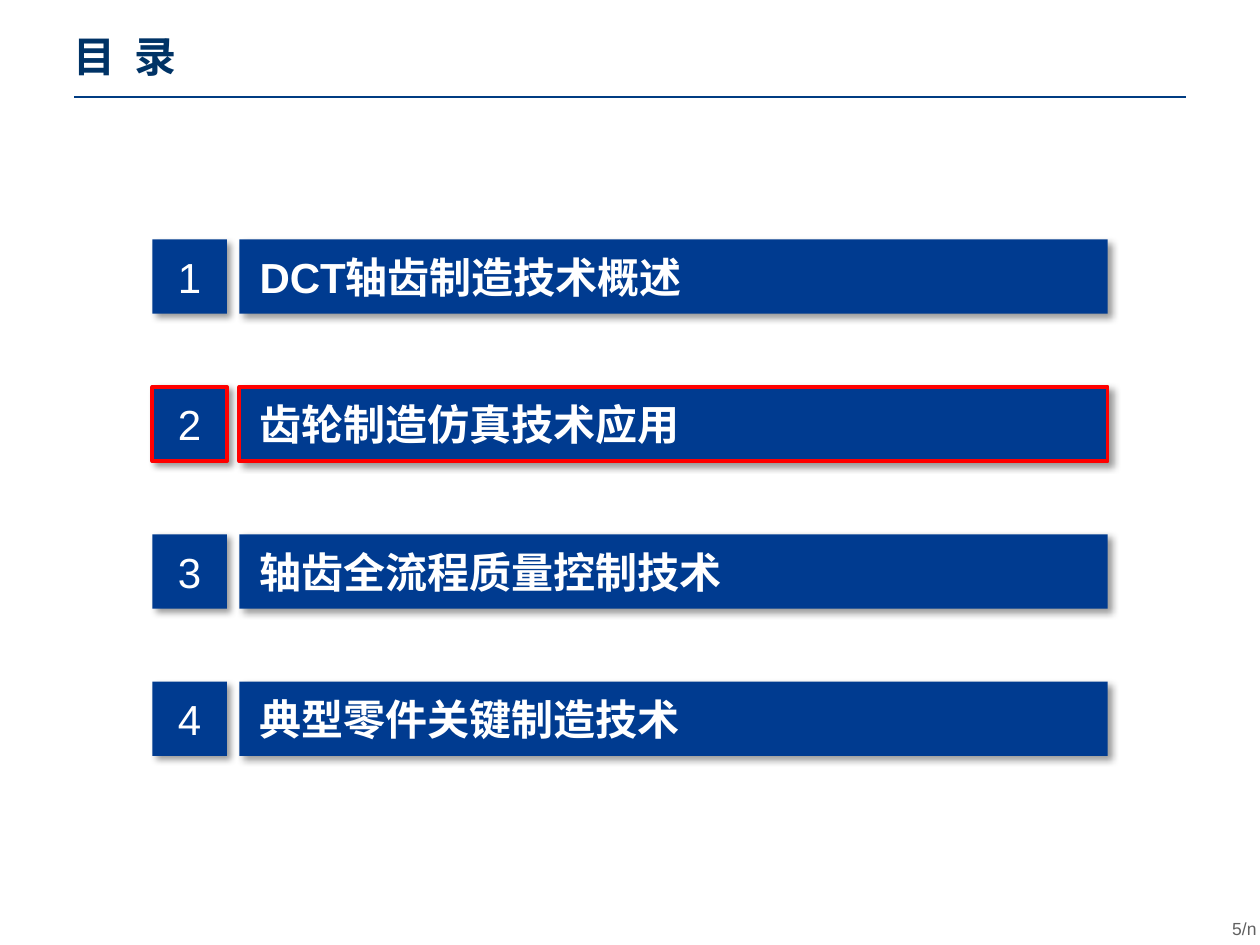
from lxml.etree import SubElement
from pptx import Presentation
from pptx.dml.color import RGBColor
from pptx.enum.shapes import MSO_CONNECTOR, MSO_SHAPE
from pptx.enum.text import MSO_ANCHOR, MSO_AUTO_SIZE, PP_ALIGN
from pptx.oxml.ns import qn
from pptx.util import Inches, Pt

NAVY = RGBColor(0x00, 0x33, 0x66)
RULE = RGBColor(0x00, 0x3C, 0x82)
BLUE = RGBColor(0x00, 0x3B, 0x90)
RED = RGBColor(0xFF, 0x00, 0x00)
GREY = RGBColor(0x60, 0x60, 0x60)
WHITE = RGBColor(0xFF, 0xFF, 0xFF)
LATIN = "Arial"
HAN = "Noto Sans CJK SC"

TOPICS = [
    "DCT轴齿制造技术概述",
    "齿轮制造仿真技术应用",
    "轴齿全流程质量控制技术",
    "典型零件关键制造技术",
]
CURRENT = 2
TOP, STEP, SIDE = 1.9, 1.17, 0.59
NUM_LEFT, BAR_LEFT, BAR_WIDTH = 1.21, 1.9, 6.89


def add_run(para, text, size, color, bold=False, font=LATIN):
    run = para.add_run()
    run.text = text
    run.font.size = Pt(size)
    run.font.bold = bold
    run.font.color.rgb = color
    run.font.name = font
    SubElement(run.font._element, qn("a:ea"), typeface=HAN)


def add_shadow(shape):
    shape.shadow.inherit = False
    effects = shape._element.spPr.find(qn("a:effectLst"))
    outer = SubElement(effects, qn("a:outerShdw"), blurRad=str(Pt(4)),
                       dist=str(Pt(3)), dir="2700000", algn="tl", rotWithShape="0")
    color = SubElement(outer, qn("a:srgbClr"), val="000000")
    SubElement(color, qn("a:alpha"), val="40000")


def add_box(group, left, top, width, text, align, inset, bold, active):
    box = group.shapes.add_shape(MSO_SHAPE.RECTANGLE, Inches(left), Inches(top),
                                 Inches(width), Inches(SIDE))
    box.fill.solid()
    box.fill.fore_color.rgb = BLUE
    if active:
        box.line.color.rgb = RED
        box.line.width = Pt(2.25)
    else:
        box.line.fill.background()
    add_shadow(box)
    frame = box.text_frame
    frame.margin_left = Inches(inset)
    frame.margin_top = frame.margin_right = frame.margin_bottom = 0
    frame.vertical_anchor = MSO_ANCHOR.MIDDLE
    para = frame.paragraphs[0]
    para.alignment = align
    add_run(para, text, 24, WHITE, bold)


def add_topic(slide, number, text):
    group = slide.shapes.add_group_shape()
    top = TOP + (number - 1) * STEP
    active = number == CURRENT
    add_box(group, NUM_LEFT, top, SIDE, str(number), PP_ALIGN.CENTER, 0, False, active)
    add_box(group, BAR_LEFT, top, BAR_WIDTH, text, PP_ALIGN.LEFT, 0.16, True, active)


def set_title(slide, text):
    title = slide.shapes.title
    title.left, title.top = Inches(0.48), Inches(0.19)
    title.width, title.height = Inches(1.07), Inches(0.5)
    frame = title.text_frame
    frame.word_wrap = False
    frame.auto_size = MSO_AUTO_SIZE.SHAPE_TO_FIT_TEXT
    frame.vertical_anchor = MSO_ANCHOR.TOP
    para = frame.paragraphs[0]
    para.alignment = PP_ALIGN.LEFT
    add_run(para, text, 24, NAVY, True, HAN)


def add_rule(slide):
    rule = slide.shapes.add_connector(MSO_CONNECTOR.STRAIGHT, Inches(0.59), Inches(0.77),
                                      Inches(9.41), Inches(0.77))
    rule.line.color.rgb = RULE
    rule.line.width = Pt(1.5)
    SubElement(rule._element.spPr, qn("a:effectLst"))


def add_page(slide, text):
    box = slide.shapes.add_textbox(Inches(9.56), Inches(7.24), Inches(0.51), Inches(0.24))
    frame = box.text_frame
    frame.word_wrap = True
    para = frame.paragraphs[0]
    para.alignment = PP_ALIGN.RIGHT
    add_run(para, text, 10, GREY)


def main():
    deck = Presentation()
    deck.slide_width, deck.slide_height = Inches(10), Inches(7.5)
    slide = deck.slides.add_slide(deck.slide_layouts[5])
    add_rule(slide)
    add_page(slide, "5/n")
    set_title(slide, "目  录")
    for number, text in enumerate(TOPICS, 1):
        add_topic(slide, number, text)
    deck.save("out.pptx")


if __name__ == "__main__":
    main()
